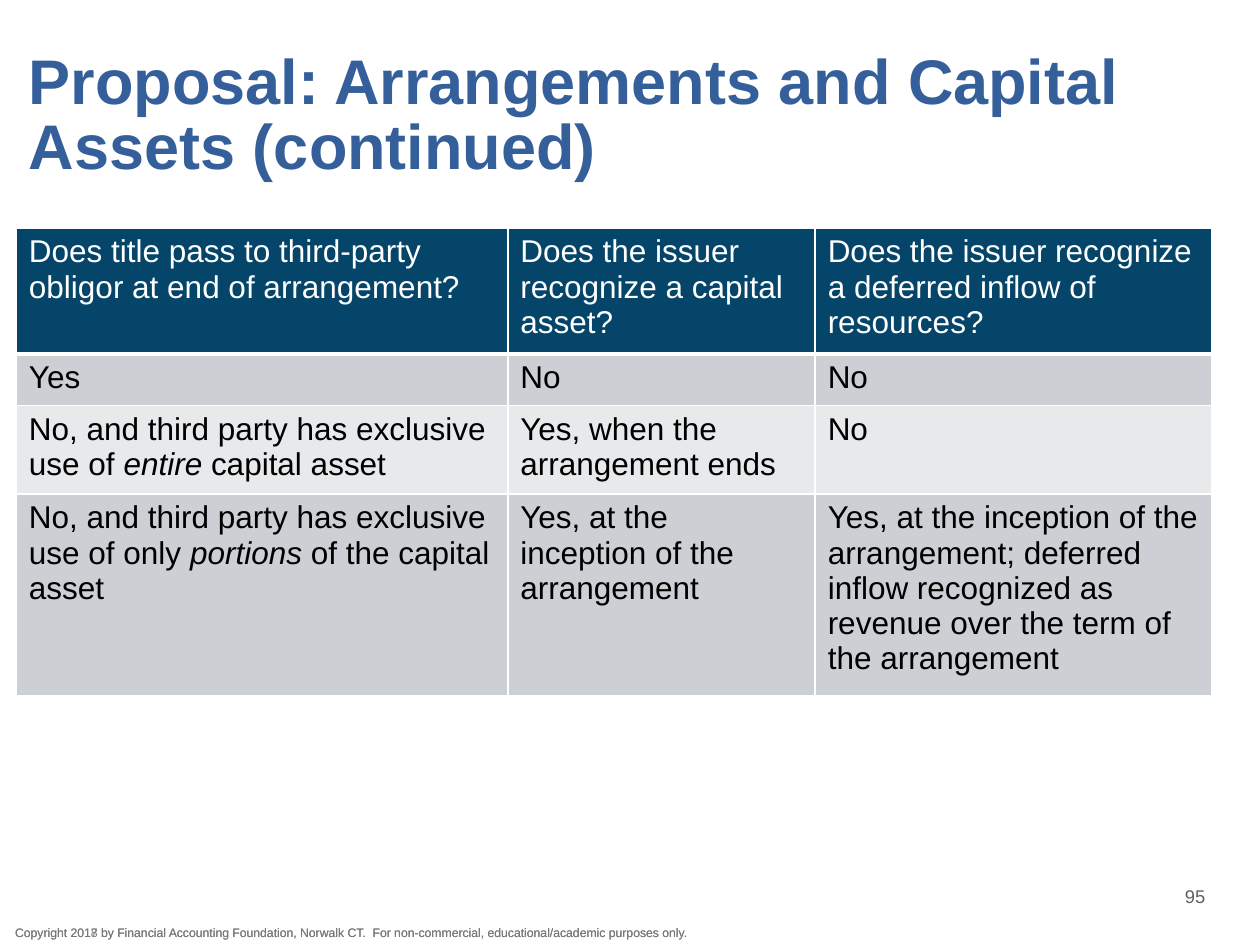
"""Build the slide on arrangements and capital assets."""
from lxml.etree import SubElement
from pptx import Presentation
from pptx.dml.color import RGBColor
from pptx.enum.text import MSO_ANCHOR, PP_ALIGN
from pptx.oxml.ns import qn
from pptx.util import Inches, Pt


def color(code):
    """Turn a hex string into a colour."""
    return RGBColor.from_string(code)


def write(para, text, size, code, **marks):
    """Add a formatted run to a paragraph."""
    run = para.add_run()
    run.text = text
    run.font.color.rgb = color(code)
    for name, value in {"name": "Arial", "size": Pt(size), **marks}.items():
        setattr(run.font, name, value)


deck = Presentation()
deck.slide_width, deck.slide_height = Inches(10), Inches(7.5)
slide = deck.slides.add_slide(deck.slide_layouts[5])
shapes = slide.shapes

for year in (2018, 2017):
    box = shapes.add_textbox(Inches(0.12), Inches(7.34), Inches(5.43), Inches(0.14))
    frame = box.text_frame
    for side in ("left", "top", "right", "bottom"):
        setattr(frame, f"margin_{side}", 0)
    frame.word_wrap = True
    line = (f"Copyright {year} by Financial Accounting Foundation, Norwalk CT.  "
            "For non-commercial, educational/academic purposes only.")
    write(frame.paragraphs[0], line, 7, "78797B")

title = shapes.title
place = {"left": 0.13, "top": 0.44, "width": 9.49, "height": 0.98}
for name, value in place.items():
    setattr(title, name, Inches(value))
frame = title.text_frame
inset = {"left": 0.1, "top": 0, "right": 0, "bottom": 0}
for side, value in inset.items():
    setattr(frame, f"margin_{side}", Inches(value))
frame.word_wrap = True
frame.vertical_anchor = MSO_ANCHOR.MIDDLE
para = frame.paragraphs[0]
para.alignment = PP_ALIGN.LEFT
para.line_spacing = Pt(37)
write(para, "Proposal: Arrangements and Capital Assets (continued)", 36, "355F9A", bold=True)

rows = [
    [["Does title pass to third-party obligor at end of arrangement?"],
     ["Does the issuer recognize a capital asset?"],
     ["Does the issuer recognize a deferred inflow of resources?"]],
    [["Yes"], ["No"], ["No"]],
    [["No, and third party has exclusive use of ", "entire", " capital asset"],
     ["Yes, when the arrangement ends"], ["No"]],
    [["No, and third party has exclusive use of only ", "portions ", "of the capital asset"],
     ["Yes, at the inception of the arrangement"],
     ["Yes, at the inception of the arrangement; deferred inflow recognized as "
      "revenue over the term of the arrangement"]],
]
widths = [3.9, 2.44, 3.15]
heights = [0.94, 0.41, 0.66, 1.5]
fills = ["054569", "CCCFD4", "E7E9EB", "CCCFD4"]
table = shapes.add_table(len(rows), len(widths), Inches(0.13), Inches(1.81),
                         Inches(sum(widths)), Inches(sum(heights))).table
for col, width in zip(table.columns, widths):
    col.width = Inches(width)
for r, (row, height, fill) in enumerate(zip(rows, heights, fills)):
    table.rows[r].height = Inches(height)
    ink = "000000" if r else "FFFFFF"
    for c, parts in enumerate(row):
        cell = table.cell(r, c)
        para = cell.text_frame.paragraphs[0]
        for n, part in enumerate(parts):
            write(para, part, 18, ink, italic=n == 1)
        props = cell._tc.get_or_add_tcPr()
        for side in "LRTB":
            wide = 3 if r == 0 and side == "B" else 1
            edge = SubElement(props, qn(f"a:ln{side}"), w=str(Pt(wide)))
            paint = SubElement(edge, qn("a:solidFill"))
            SubElement(paint, qn("a:srgbClr"), val="FFFFFF")
        cell.fill.solid()
        cell.fill.fore_color.rgb = color(fill)

box = shapes.add_textbox(Inches(8.97), Inches(6.95), Inches(1.03), Inches(0.33))
frame = box.text_frame
frame.word_wrap = True
frame.vertical_anchor = MSO_ANCHOR.MIDDLE
para = frame.paragraphs[0]
para.alignment = PP_ALIGN.CENTER
write(para, "95", 10.5, "5F5F5F")

deck.save("out.pptx")
